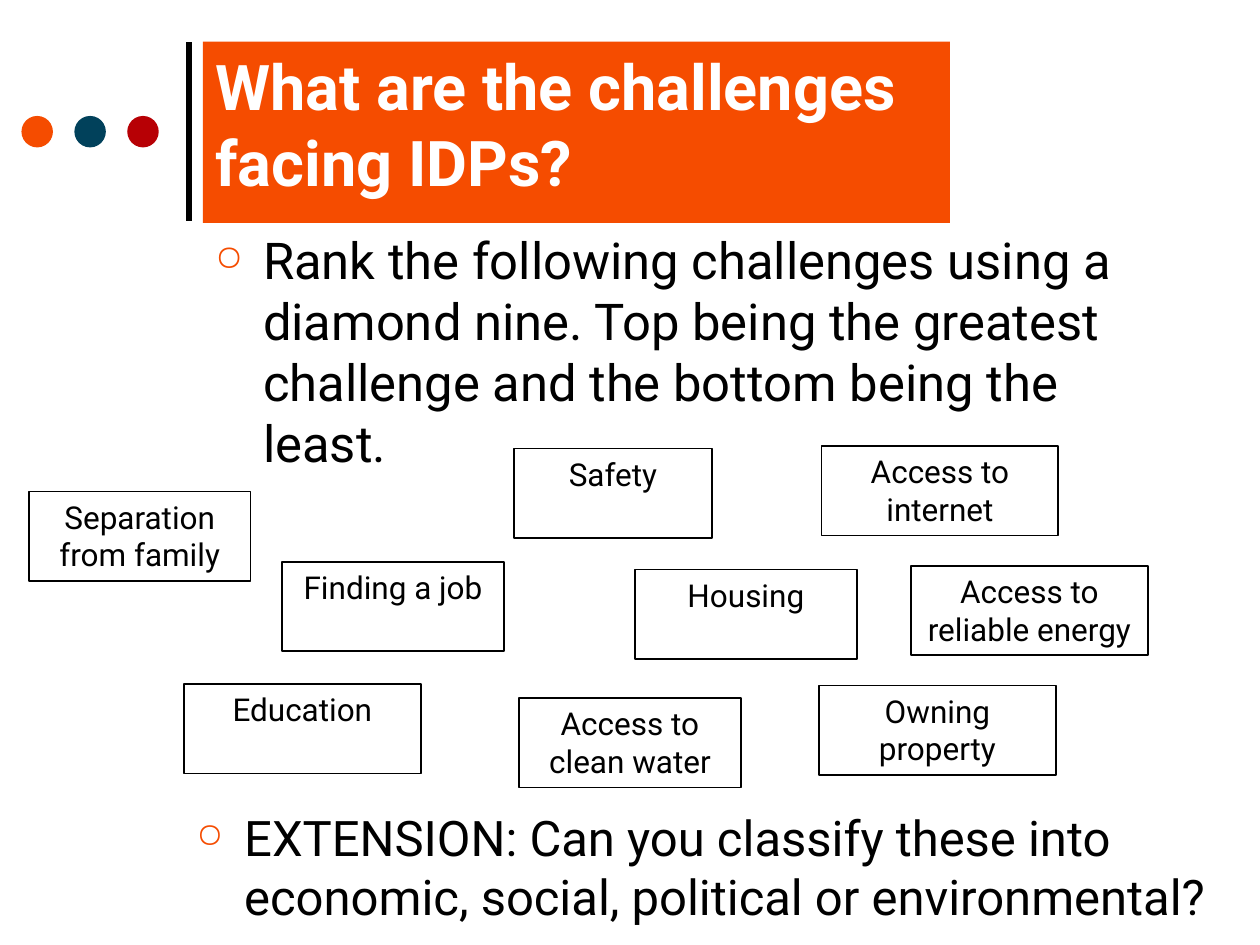
from lxml import etree
from pptx import Presentation
from pptx.dml.color import RGBColor
from pptx.enum.shapes import MSO_CONNECTOR, MSO_SHAPE
from pptx.enum.text import MSO_ANCHOR, PP_ALIGN
from pptx.oxml.ns import qn
from pptx.util import Inches, Pt

COLORS = {"orange": "F54C00", "navy": "01415B", "red": "B70005",
          "black": "000000", "white": "FFFFFF"}
FONT = "Roboto"

CHALLENGES = [
    ("Safety", 4.08, 3.56, 1.57),
    ("Finding a job", 2.24, 4.46, 1.76),
    ("Separation from family", 0.23, 3.9, 1.76),
    ("Access to clean water", 4.12, 5.54, 1.76),
    ("Housing", 5.04, 4.52, 1.76),
    ("Access to reliable energy", 7.23, 4.49, 1.88),
    ("Owning property", 6.5, 5.44, 1.88),
    ("Access to internet", 6.52, 3.54, 1.88),
    ("Education", 1.46, 5.43, 1.88),
]


def rgb(name):
    return RGBColor.from_string(COLORS[name])


class SlideBuilder:
    def __init__(self, page):
        self.page = page
        self.shapes = page.shapes

    def add_text(self, shape, text, size, color="black", bold=False, align=PP_ALIGN.LEFT):
        frame = shape.text_frame
        frame.word_wrap = True
        frame.vertical_anchor = MSO_ANCHOR.TOP
        para = frame.paragraphs[0]
        para.alignment = align
        span = para.add_run()
        span.text = text
        span.font.name = FONT
        span.font.size = Pt(size)
        span.font.bold = bold
        span.font.color.rgb = rgb(color)
        return para

    def title(self, text, left, top, width, height):
        box = self.shapes.title
        box.left, box.top = Inches(left), Inches(top)
        box.width, box.height = Inches(width), Inches(height)
        box.fill.solid()
        box.fill.fore_color.rgb = rgb("orange")
        self.add_text(box, text, 36, "white", bold=True)

    def rule(self, x, top, bottom):
        line = self.shapes.add_connector(MSO_CONNECTOR.STRAIGHT, Inches(x), Inches(bottom),
                                         Inches(x), Inches(top))
        line.line.color.rgb = rgb("black")
        line.line.width = Pt(3)
        etree.SubElement(line._element.spPr, qn("a:effectLst"))

    def dot(self, left, top, size, color):
        dot = self.shapes.add_shape(MSO_SHAPE.OVAL, Inches(left), Inches(top),
                                    Inches(size), Inches(size))
        dot.shadow.inherit = False
        dot.fill.solid()
        dot.fill.fore_color.rgb = rgb(color)
        dot.line.fill.background()

    def bullet(self, text, left, top, width, height, size):
        box = self.shapes.add_textbox(Inches(left), Inches(top), Inches(width), Inches(height))
        para = self.add_text(box, text, size)
        props = para._p.get_or_add_pPr()
        props.set("marL", str(Inches(0.38)))
        props.set("indent", str(Inches(-0.38)))
        tint = etree.SubElement(props, qn("a:buClr"))
        etree.SubElement(tint, qn("a:srgbClr"), val=COLORS["orange"])
        etree.SubElement(props, qn("a:buSzPct"), val="70000")
        etree.SubElement(props, qn("a:buChar"), char="○")

    def card(self, text, left, top, width, height=0.71):
        card = self.shapes.add_shape(MSO_SHAPE.RECTANGLE, Inches(left), Inches(top),
                                     Inches(width), Inches(height))
        card.shadow.inherit = False
        card.fill.background()
        card.line.color.rgb = rgb("black")
        card.line.width = Pt(1)
        self.add_text(card, text, 18, align=PP_ALIGN.CENTER)


def main():
    deck = Presentation()
    deck.slide_width, deck.slide_height = Inches(10), Inches(7.5)
    slide = SlideBuilder(deck.slides.add_slide(deck.slide_layouts[5]))

    slide.rule(1.5, 0.33, 1.75)
    for index, color in enumerate(("orange", "navy", "red")):
        slide.dot(0.17 + 0.42 * index, 0.92, 0.25, color)
    slide.title("What are the challenges facing IDPs?", 1.61, 0.33, 5.93, 1.44)
    slide.bullet("EXTENSION: Can you classify these into economic, social, "
                 "political or environmental?", 1.46, 6.36, 8.29, 0.79, 28)
    slide.bullet("Rank the following challenges using a diamond nine. Top being the "
                 "greatest challenge and the bottom being the least.",
                 1.61, 1.77, 7.67, 1.19, 29)
    for text, left, top, width in CHALLENGES:
        slide.card(text, left, top, width)

    deck.save("out.pptx")


if __name__ == "__main__":
    main()
